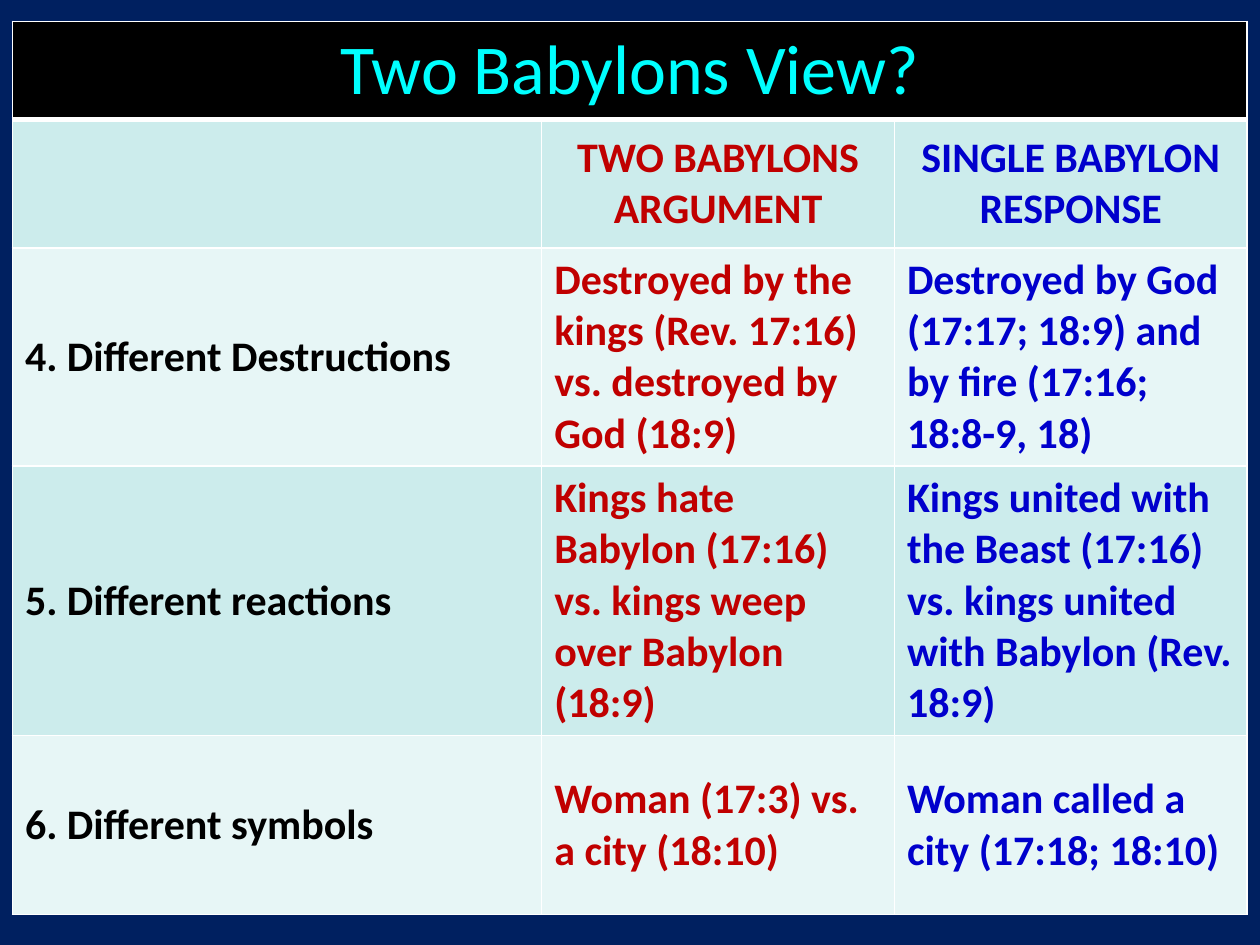
from dataclasses import dataclass

from lxml import etree
from pptx import Presentation
from pptx.dml.color import RGBColor
from pptx.enum.text import MSO_ANCHOR, PP_ALIGN
from pptx.oxml.ns import qn
from pptx.table import _Cell
from pptx.util import Cm, Pt

LEFT, CENTER = PP_ALIGN.LEFT, PP_ALIGN.CENTER
TOP, MIDDLE = MSO_ANCHOR.TOP, MSO_ANCHOR.MIDDLE
FONT = "Calibri"
BLANK = 6

COLORS = {
    "back": "002060",
    "banner": "000000",
    "title": "00FFFF",
    "dark band": "CCECEC",
    "light band": "E7F6F6",
    "topic": "000000",
    "claim": "C00000",
    "reply": "0000CC",
    "grid": "FFFFFF",
}
WIDTHS = [10.67, 7.11, 7.11]
HEIGHTS = [1.98, 2.59, 4.39, 5.44, 3.61]


@dataclass
class Point:
    topic: str
    claim: str
    reply: str
    align: PP_ALIGN = LEFT


POINTS = [
    Point("", "TWO BABYLONS ARGUMENT", "SINGLE BABYLON RESPONSE", CENTER),
    Point("4. Different Destructions",
          "Destroyed by the kings (Rev. 17:16) vs. destroyed by God (18:9)",
          "Destroyed by God (17:17; 18:9) and by fire (17:16; 18:8-9, 18)"),
    Point("5. Different reactions",
          "Kings hate Babylon (17:16) vs. kings weep over Babylon (18:9)",
          "Kings united with the Beast (17:16) vs. kings united with Babylon "
          "(Rev. 18:9)"),
    Point("6. Different symbols",
          "Woman (17:3) vs. a city (18:10)",
          "Woman called a city (17:18; 18:10)"),
]


def color(name: str) -> RGBColor:
    return RGBColor.from_string(COLORS[name])


def paint(cell: _Cell, fill: str, top: float = 1, base: float = 1) -> None:
    """Give a cell its grid lines, with widths in points, and its fill."""
    props = cell._tc.get_or_add_tcPr()
    for side, width in zip("LRTB", (1, 1, top, base)):
        line = etree.SubElement(props, qn(f"a:ln{side}"), w=str(Pt(width)))
        solid = etree.SubElement(line, qn("a:solidFill"))
        etree.SubElement(solid, qn("a:srgbClr"), val=COLORS["grid"])
    cell.fill.solid()
    cell.fill.fore_color.rgb = color(fill)


def write(cell: _Cell, text: str, ink: str, size: float, bold: bool,
          align: PP_ALIGN, anchor: MSO_ANCHOR) -> None:
    cell.vertical_anchor = anchor
    par = cell.text_frame.paragraphs[0]
    par.alignment = align
    run = par.add_run()
    run.text = text
    run.font.name = FONT
    run.font.size = Pt(size)
    run.font.bold = bold
    run.font.color.rgb = color(ink)


def main() -> None:
    deck = Presentation()
    deck.slide_width, deck.slide_height = Cm(25.4), Cm(19.05)
    slide = deck.slides.add_slide(deck.slide_layouts[BLANK])
    slide.background.fill.solid()
    slide.background.fill.fore_color.rgb = color("back")

    table = slide.shapes.add_table(
        len(HEIGHTS), len(WIDTHS), Cm(0.25), Cm(0.43),
        Cm(sum(WIDTHS)), Cm(sum(HEIGHTS))).table
    table.first_row = table.horz_banding = False
    for col, width in zip(table.columns, WIDTHS):
        col.width = Cm(width)
    for row, height in zip(table.rows, HEIGHTS):
        row.height = Cm(height)

    banner = table.cell(0, 0)
    banner.merge(table.cell(0, len(WIDTHS) - 1))
    for col in range(len(WIDTHS)):
        paint(table.cell(0, col), "banner", base=3)
    write(banner, "Two Babylons View?", "title", 40, False, CENTER, TOP)

    for row, point in enumerate(POINTS, 1):
        band = "dark band" if row % 2 else "light band"
        for col, part in enumerate(("topic", "claim", "reply")):
            cell = table.cell(row, col)
            paint(cell, band, top=3 if row == 1 else 1)
            text = getattr(point, part)
            if text:
                write(cell, text, part, 24, True, point.align, MIDDLE)

    deck.save("out.pptx")


if __name__ == "__main__":
    main()
